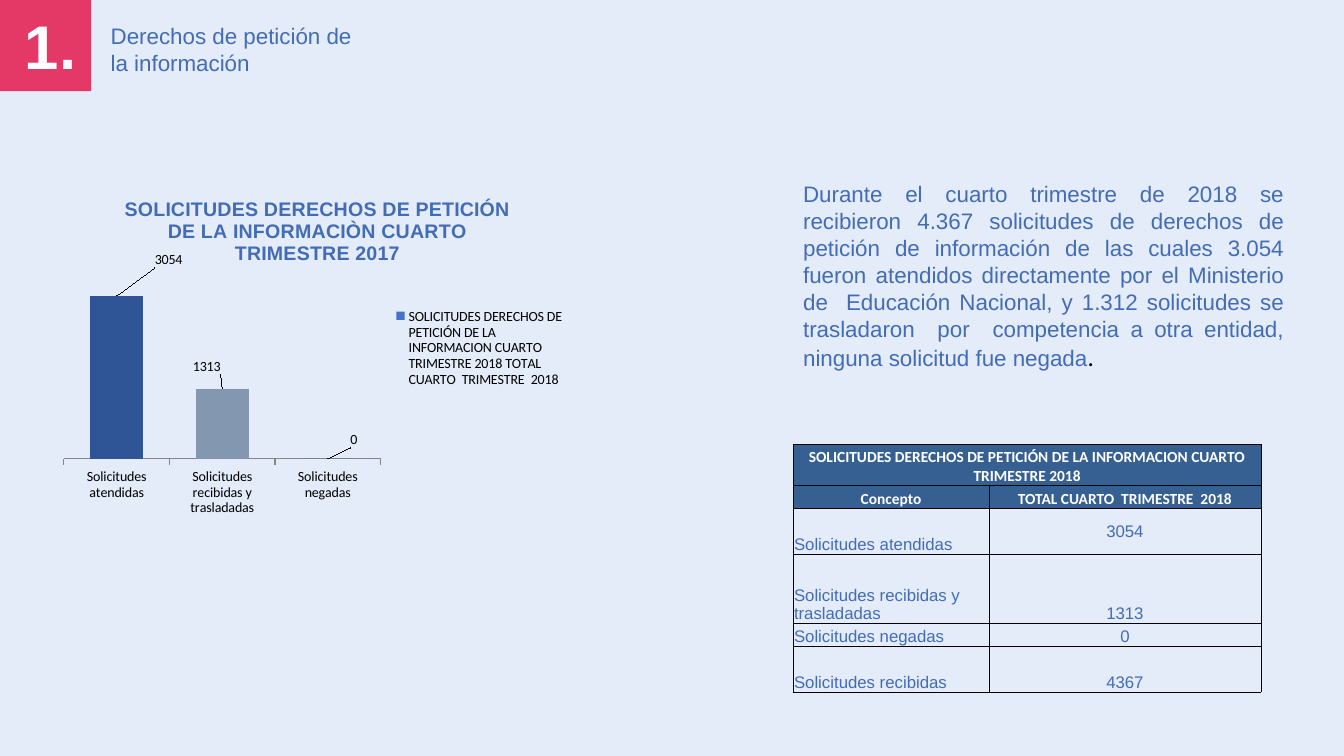
import pptx
import pptx.chart.data
import pptx.dml.color
import pptx.enum.chart
import pptx.enum.shapes
import pptx.enum.text
import pptx.oxml
import pptx.oxml.ns
import pptx.util

Cm, Pt = pptx.util.Cm, pptx.util.Pt
ALIGN = pptx.enum.text.PP_ALIGN
ANCHOR = pptx.enum.text.MSO_ANCHOR
BLUE = "436CB7"
HEAD = "SOLICITUDES DERECHOS DE PETICIÓN DE LA INFORMACION CUARTO TRIMESTRE 2018"
TOTAL = "TOTAL CUARTO  TRIMESTRE  2018"
COUNTS = {
    "Solicitudes atendidas": 3054,
    "Solicitudes recibidas y trasladadas": 1313,
    "Solicitudes negadas": 0,
}


def color(text):
    return pptx.dml.color.RGBColor.from_string(text)


def paint(fill, tone):
    fill.solid()
    fill.fore_color.rgb = color(tone)


def style(font, size, tone, face="Arial", bold=False):
    font.size, font.name, font.bold = Pt(size), face, bold
    font.color.rgb = color(tone)


def place(node, index, **parts):
    """Give a chart part a manual layout, as fractions of the chart."""
    for old in node.findall(pptx.oxml.ns.qn("c:layout")):
        node.remove(old)
    body = "".join(f'<c:{key} val="{val}"/>' for key, val in parts.items())
    node.insert(index, pptx.oxml.parse_xml(
        f'<c:layout {pptx.oxml.ns.nsdecls("c")}>'
        f"<c:manualLayout>{body}</c:manualLayout></c:layout>"))


def border(cell, tone="000000", width=Pt(0.5)):
    for index, side in enumerate("LRTB"):
        cell._tc.get_or_add_tcPr().insert(index, pptx.oxml.parse_xml(
            f'<a:ln{side} {pptx.oxml.ns.nsdecls("a")} w="{width}"><a:solidFill>'
            f'<a:srgbClr val="{tone}"/></a:solidFill></a:ln{side}>'))


class Page:
    def __init__(self, deck, back):
        self.slide = deck.slides.add_slide(deck.slide_layouts[6])
        self.shapes = self.slide.shapes
        paint(self.slide.background.fill, back)

    def rect(self, box, tone):
        shape = self.shapes.add_shape(
            pptx.enum.shapes.MSO_SHAPE.RECTANGLE, *map(Cm, box))
        shape.shadow.inherit = False
        paint(shape.fill, tone)
        shape.line.fill.background()

    def text(self, box, words, size, tone, bold=False, align=ALIGN.LEFT):
        frame = self.shapes.add_textbox(*map(Cm, box)).text_frame
        frame.word_wrap = True
        frame.auto_size = pptx.enum.text.MSO_AUTO_SIZE.SHAPE_TO_FIT_TEXT
        frame.text = words
        para = frame.paragraphs[0]
        para.alignment = align
        style(para.runs[0].font, size, tone, bold=bold)
        return para

    def chart(self, box, title, name, counts, tones, shifts):
        data = pptx.chart.data.CategoryChartData()
        data.categories = list(counts)
        data.add_series(name, list(counts.values()))
        kinds = pptx.enum.chart
        chart = self.shapes.add_chart(
            kinds.XL_CHART_TYPE.COLUMN_CLUSTERED, *map(Cm, box), data).chart
        style(chart.font, 10, "000000", "Calibri")

        chart.has_title = True
        frame = chart.chart_title.text_frame
        frame.text = title
        style(frame.paragraphs[0].runs[0].font, 14, BLUE, bold=True)
        place(chart.chart_title._element, 1,
              xMode="edge", yMode="edge", x=0.13, y=0.05)

        chart.has_legend = True
        chart.legend.position = kinds.XL_LEGEND_POSITION.RIGHT
        chart.legend.include_in_layout = False
        place(chart.legend._element, 1,
              xMode="edge", yMode="edge", x=0.65, y=0.37, w=0.34, h=0.26)

        axis = chart.value_axis
        axis.visible = axis.has_major_gridlines = False
        axis.minimum_scale, axis.maximum_scale = 0, 3500
        base = chart.category_axis
        base.major_tick_mark = kinds.XL_TICK_MARK.OUTSIDE
        base.format.line.color.rgb = color("868686")

        plot = chart.plots[0]
        plot.gap_width, plot.vary_by_categories = 100, False
        plot.has_data_labels = True
        plot.data_labels.show_value = True
        place(chart._chartSpace.chart.plotArea, 0, layoutTarget="inner",
              xMode="edge", yMode="edge", x=0.02, y=0.28, w=0.61, h=0.54)

        series = plot.series[0]
        paint(series.format.fill, "4472C4")
        for index, tone in enumerate(tones):
            paint(series.points[index].format.fill, tone)
        for index, (x, y) in enumerate(shifts):
            label = series.points[index].data_label
            label.position = kinds.XL_LABEL_POSITION.OUTSIDE_END
            place(label._dLbl, 1, x=x, y=y)

    def table(self, box, cols, highs, rows):
        table = self.shapes.add_table(len(rows), len(cols), *map(Cm, box)).table
        table.first_row = table.horz_banding = False
        for col, width in zip(table.columns, cols):
            col.width = Cm(width)
        for row, high in zip(table.rows, highs):
            row.height = Cm(high)
        for r, row in enumerate(rows):
            for c, words in enumerate(row):
                self.cell(table.cell(r, c), words, r < 2, c > 0)
        table.cell(0, 0).merge(table.cell(0, 1))
        table.cell(2, 1).vertical_anchor = ANCHOR.MIDDLE

    def cell(self, cell, words, head, mid):
        cell.margin_left = cell.margin_right = cell.margin_top = Cm(0.02)
        cell.margin_bottom = 0
        cell.vertical_anchor = ANCHOR.BOTTOM
        cell.text = words
        para = cell.text_frame.paragraphs[0]
        para.alignment = ALIGN.CENTER if head or mid else ALIGN.LEFT
        if head:
            paint(cell.fill, "366092")
            style(para.font, 11, "FFFFFF", "Calibri", True)
        else:
            cell.fill.background()
            style(para.font, 12, BLUE)
        for run in para.runs:
            if head:
                style(run.font, 11, "FFFFFF", "Calibri", True)
            else:
                style(run.font, 12, BLUE)
        border(cell)


def main():
    deck = pptx.Presentation()
    deck.slide_width, deck.slide_height = Cm(33.87), Cm(19.05)
    page = Page(deck, "E3ECF8")
    page.rect((0, 0, 2.3, 2.3), "E43866")
    page.text((0.38, 0.08, 1.93, 2.13), "1.", 44, "FFFFFF", bold=True)
    page.text((2.54, 0.43, 6.88, 1.63),
              "Derechos de petición de la información", 16, BLUE)
    para = page.text(
        (19.99, 4.42, 12.62, 5.13),
        "Durante el cuarto trimestre de 2018 se recibieron 4.367 solicitudes "
        "de derechos de petición de información de las cuales 3.054 fueron "
        "atendidos directamente por el Ministerio de  Educación Nacional, y "
        "1.312 solicitudes se trasladaron  por  competencia a otra entidad, "
        "ninguna solicitud fue negada", 16, BLUE, align=ALIGN.JUSTIFY)
    stop = para.add_run()
    stop.text = "."
    style(stop.font, 18, "000000", "Calibri")
    page.chart((1.35, 4.42, 13.08, 8.71),
               "SOLICITUDES DERECHOS DE PETICIÓN DE LA INFORMACIÒN "
               "CUARTO TRIMESTRE 2017", f"{HEAD} {TOTAL}", COUNTS,
               ("2F5597", "8497B0"),
               ((0.1, -0.07), (-0.03, -0.03), (0.05, -0.02)))
    rows = [(HEAD, ""), ("Concepto", TOTAL)]
    rows += [(name, str(count)) for name, count in COUNTS.items()]
    rows.append(("Solicitudes recibidas", "4367"))
    page.table((19.99, 11.2, 11.79, 6.25), (4.93, 6.86),
               (1.04, 0.58, 1.15, 1.74, 0.58, 1.15), rows)
    deck.save("out.pptx")


if __name__ == "__main__":
    main()
